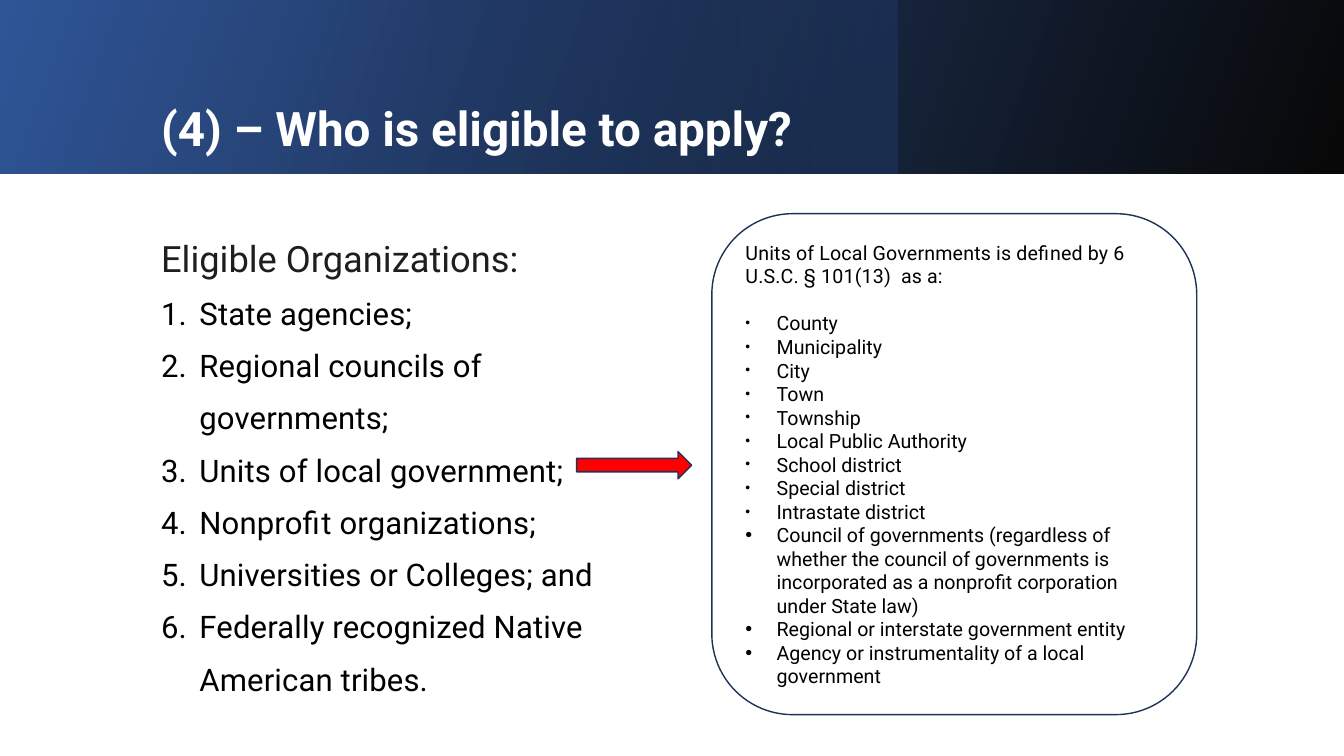
from lxml import etree
from pptx import Presentation
from pptx.dml.color import RGBColor
from pptx.enum import shapes, text
from pptx.oxml import ns
from pptx.util import Inches, Pt

KIND = shapes.MSO_SHAPE
ORGS = [
    "State agencies;",
    "Regional councils of governments;",
    "Units of local government;",
    "Nonprofit organizations;",
    "Universities or Colleges; and",
    "Federally recognized Native American tribes.",
]
SHORT = [
    "County", "Municipality", "City", "Town", "Township",
    "Local Public Authority", "School district", "Special district",
    "Intrastate district",
]
LONG = [
    "Council of governments (regardless of whether the council of governments "
    "is incorporated as a nonprofit corporation under State law)",
    "Regional or interstate government entity",
    "Agency or instrumentality of a local government",
]


def color(code):
    """Turn a hex string into a colour."""
    return RGBColor.from_string(code)


def add_node(parent, tag, **attrs):
    """Append a drawing element with attributes."""
    node = etree.SubElement(parent, ns.qn(tag))
    for key, value in attrs.items():
        node.set(key, str(value))
    return node


def add_shape(slide, kind, box, fill, line=None):
    """Add a flat preset shape."""
    shape = slide.shapes.add_shape(kind, *map(Inches, box))
    shape.shadow.inherit = False
    shape.fill.solid()
    shape.fill.fore_color.rgb = color(fill)
    if line:
        shape.line.color.rgb = color(line)
        shape.line.width = Pt(1)
    else:
        shape.line.fill.background()
    return shape


def add_fade(slide, box, stops, angle):
    """Add a rectangle with gradient stops of place, colour and opacity."""
    shape = add_shape(slide, KIND.RECTANGLE, box, stops[0][1])
    solid = shape._element.spPr.find(ns.qn("a:solidFill"))
    grad = etree.Element(ns.qn("a:gradFill"), rotWithShape="1")
    group = add_node(grad, "a:gsLst")
    for place, code, alpha in stops:
        stop = add_node(group, "a:gs", pos=place * 1000)
        tint = add_node(stop, "a:srgbClr", val=code)
        if alpha < 100:
            add_node(tint, "a:alpha", val=alpha * 1000)
    add_node(grad, "a:lin", ang=angle * 60000, scaled=0)
    solid.getparent().replace(solid, grad)


def set_frame(shape, anchor):
    """Wrap and anchor the text of a shape."""
    frame = shape.text_frame
    frame.word_wrap = True
    frame.vertical_anchor = anchor
    return frame


def add_text(slide, box, anchor):
    """Add a text box and return its frame."""
    return set_frame(slide.shapes.add_textbox(*map(Inches, box)), anchor)


def set_mark(para, indent, number=False, scale=100):
    """Give a paragraph a hanging number or bullet."""
    props = para._p.get_or_add_pPr()
    props.set("marL", str(Inches(indent)))
    props.set("indent", str(-Inches(indent)))
    if number:
        add_node(props, "a:buFont", typeface="+mj-lt")
        add_node(props, "a:buAutoNum", type="arabicPeriod")
    else:
        add_node(props, "a:buSzPct", val=scale * 1000)
        add_node(props, "a:buFont", typeface="Arial")
        add_node(props, "a:buChar", char="•")


def write(para, words, size, code="000000", bold=False, track=0, lead=1.0):
    """Write one run into a paragraph."""
    para.alignment = text.PP_ALIGN.LEFT
    para.line_spacing = lead
    run = para.add_run()
    run.text = words
    run.font.name = "Roboto"
    run.font.size = Pt(size)
    run.font.bold = bold
    run.font.color.rgb = color(code)
    if track:
        run._r.get_or_add_rPr().set("spc", str(track))


def add_banner(slide):
    """Draw the shaded banner and its title."""
    add_fade(slide, (0, 0, 13.33, 1.72),
             [(0, "2F5597", 100), (100, "080808", 100)], 20)
    add_fade(slide, (4.19, 0, 4.71, 1.72),
             [(0, "203864", 0), (100, "203864", 55)], 0)
    frame = add_text(slide, (1.5, 0.89, 10.36, 0.83), text.MSO_ANCHOR.MIDDLE)
    write(frame.paragraphs[0], "(4) – Who is eligible to apply?", 34,
          "FFFFFF", bold=True, lead=0.9)


def add_orgs(slide):
    """List the eligible organizations."""
    frame = add_text(slide, (1.5, 2.12, 5.17, 4.97), text.MSO_ANCHOR.TOP)
    write(frame.paragraphs[0], "Eligible Organizations:", 25.9, "1E1E1E",
          lead=1.4)
    for org in ORGS:
        para = frame.add_paragraph()
        set_mark(para, 0.38, number=True)
        write(para, org, 22.2, track=10, lead=1.4)


def add_units(slide):
    """Define local government units in a rounded panel."""
    panel = add_shape(slide, KIND.ROUNDED_RECTANGLE, (7.06, 2.12, 4.81, 4.97),
                      "FFFFFF", "1E3256")
    frame = set_frame(panel, text.MSO_ANCHOR.MIDDLE)
    write(frame.paragraphs[0], "Units of Local Governments is defined by "
          "6 U.S.C. § 101(13)  as a:", 14, track=10)
    for unit in SHORT + LONG:
        para = frame.add_paragraph()
        set_mark(para, 0.31, scale=70 if unit in SHORT else 100)
        write(para, unit, 14)
    frame.paragraphs[1].space_before = Pt(17)


def main():
    """Build and save the slide."""
    deck = Presentation()
    deck.slide_width, deck.slide_height = Inches(13.33), Inches(7.5)
    slide = deck.slides.add_slide(deck.slide_layouts[6])
    add_banner(slide)
    add_orgs(slide)
    add_units(slide)
    add_shape(slide, KIND.RIGHT_ARROW, (5.72, 4.48, 1.14, 0.27),
              "FF0000", "1E3256")
    deck.save("out.pptx")


if __name__ == "__main__":
    main()
